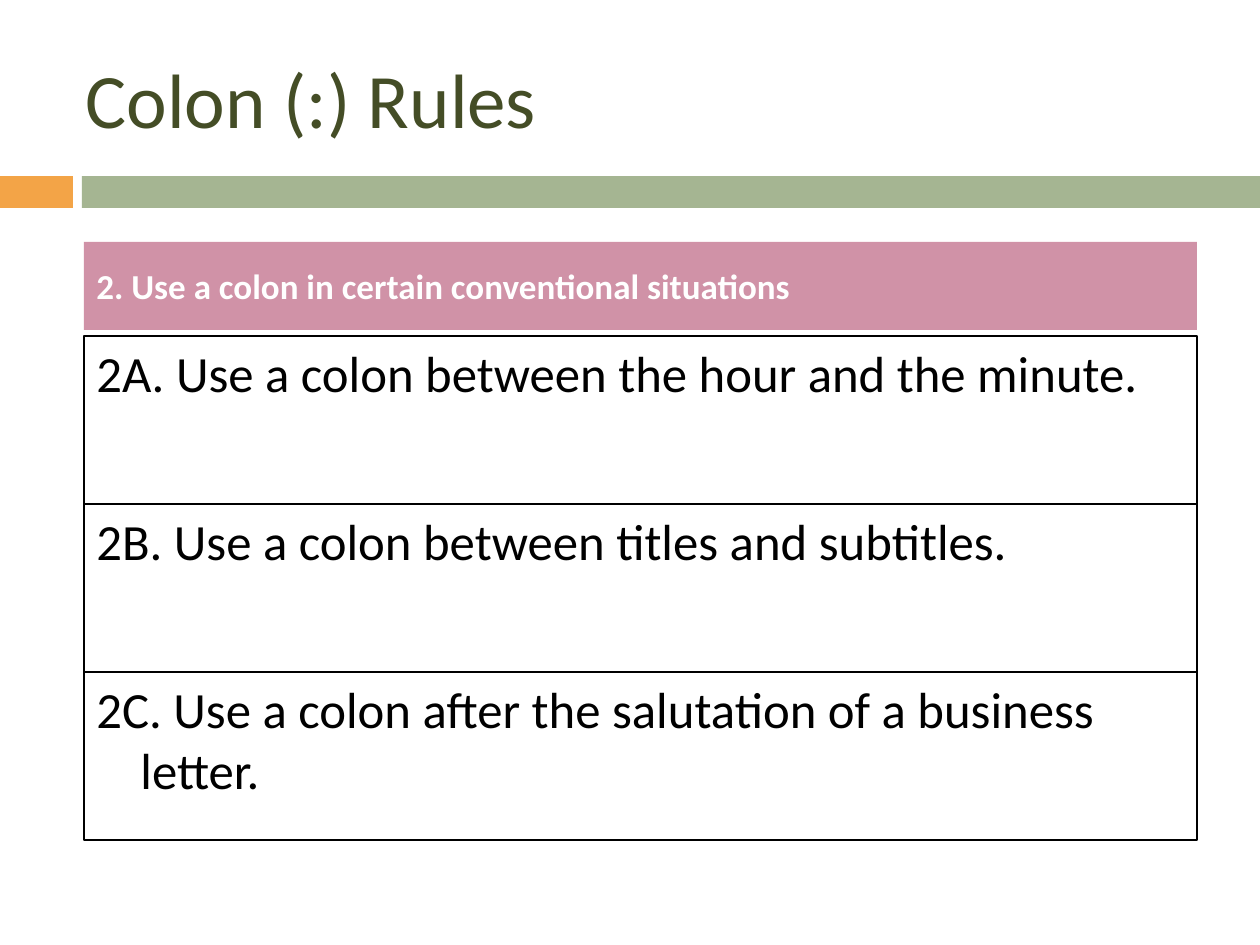
"""Build the colon rules slide: a title, a divider and a headed stack of rules."""
from dataclasses import dataclass

from pptx import Presentation
from pptx.dml.color import RGBColor
from pptx.enum.shapes import MSO_SHAPE
from pptx.enum.text import MSO_ANCHOR, MSO_AUTO_SIZE, PP_ALIGN
from pptx.util import Emu, Pt

RECTANGLE = MSO_SHAPE.RECTANGLE
TOP, MIDDLE = MSO_ANCHOR.TOP, MSO_ANCHOR.MIDDLE
LEFT = PP_ALIGN.LEFT
NO_AUTOFIT = MSO_AUTO_SIZE.NONE

PX_PER_INCH = 126
TITLE_ONLY_LAYOUT = 5
FONT = "Calibri"
COLORS = {
    "orange": "F3A447",
    "sage": "A5B592",
    "olive": "444D26",
    "rose": "D092A7",
    "white": "FFFFFF",
    "black": "000000",
}
RULES = (
    "2A. Use a colon between the hour and the minute.",
    "2B. Use a colon between titles and subtitles.",
    "2C. Use a colon after the salutation of a business letter.",
)
RULE_TOP, RULE_HEIGHT = 336, 168
COLUMN_LEFT, COLUMN_WIDTH = 84, 1113
HANGING_INDENT = 44


@dataclass(frozen=True)
class Box:
    left: int
    top: int
    width: int
    height: int
    fill: str | None = None
    line: str | None = None


def px(length: int) -> Emu:
    """Turn pixels into EMU."""
    return Emu(round(length * 914400 / PX_PER_INCH))


def color(name: str) -> RGBColor:
    """Look up a named colour."""
    return RGBColor.from_string(COLORS[name])


def place(shape, box: Box) -> None:
    """Move and size a shape to its box."""
    shape.left, shape.top = px(box.left), px(box.top)
    shape.width, shape.height = px(box.width), px(box.height)


def draw_box(slide, box: Box):
    """Draw a flat rectangle."""
    shape = slide.shapes.add_shape(RECTANGLE, 0, 0, 0, 0)
    place(shape, box)
    shape.shadow.inherit = False
    if box.fill:
        shape.fill.solid()
        shape.fill.fore_color.rgb = color(box.fill)
    else:
        shape.fill.background()
    if box.line:
        shape.line.color.rgb = color(box.line)
        shape.line.width = Pt(0.75)
    else:
        shape.line.fill.background()
    return shape


def write_text(shape, text: str, *, size: int, ink: str, bold: bool = False,
               anchor=MIDDLE, space_before: int = 0, hanging: int = 0) -> None:
    """Write one formatted paragraph into a shape."""
    frame = shape.text_frame
    frame.word_wrap = True
    frame.auto_size = NO_AUTOFIT
    frame.vertical_anchor = anchor
    paragraph = frame.paragraphs[0]
    paragraph.alignment = LEFT
    paragraph.space_before = Pt(space_before)
    if hanging:
        properties = paragraph._p.get_or_add_pPr()
        properties.set("marL", str(px(hanging)))
        properties.set("indent", str(-px(hanging)))
    run = paragraph.add_run()
    run.text = text
    run.font.name = FONT
    run.font.size = Pt(size)
    run.font.bold = bold
    run.font.color.rgb = color(ink)


def main() -> None:
    """Assemble and save the slide."""
    presentation = Presentation()
    presentation.slide_width, presentation.slide_height = px(1260), px(945)
    slide = presentation.slides.add_slide(presentation.slide_layouts[TITLE_ONLY_LAYOUT])

    draw_box(slide, Box(0, 176, 73, 32, fill="orange"))
    draw_box(slide, Box(82, 176, 1178, 32, fill="sage"))

    title = slide.shapes.title
    place(title, Box(73, 38, 1124, 120))
    write_text(title, "Colon (:) Rules", size=44, ink="olive")

    heading = draw_box(slide, Box(COLUMN_LEFT, 242, COLUMN_WIDTH, 88, fill="rose"))
    write_text(heading, "2. Use a colon in certain conventional situations",
               size=20, ink="white", bold=True, space_before=7)

    for index, rule in enumerate(RULES):
        top = RULE_TOP + index * RULE_HEIGHT
        box = Box(COLUMN_LEFT, top, COLUMN_WIDTH, RULE_HEIGHT, line="black")
        write_text(draw_box(slide, box), rule, size=29, ink="black", anchor=TOP,
                   space_before=7, hanging=HANGING_INDENT)

    presentation.save("out.pptx")


if __name__ == "__main__":
    main()
